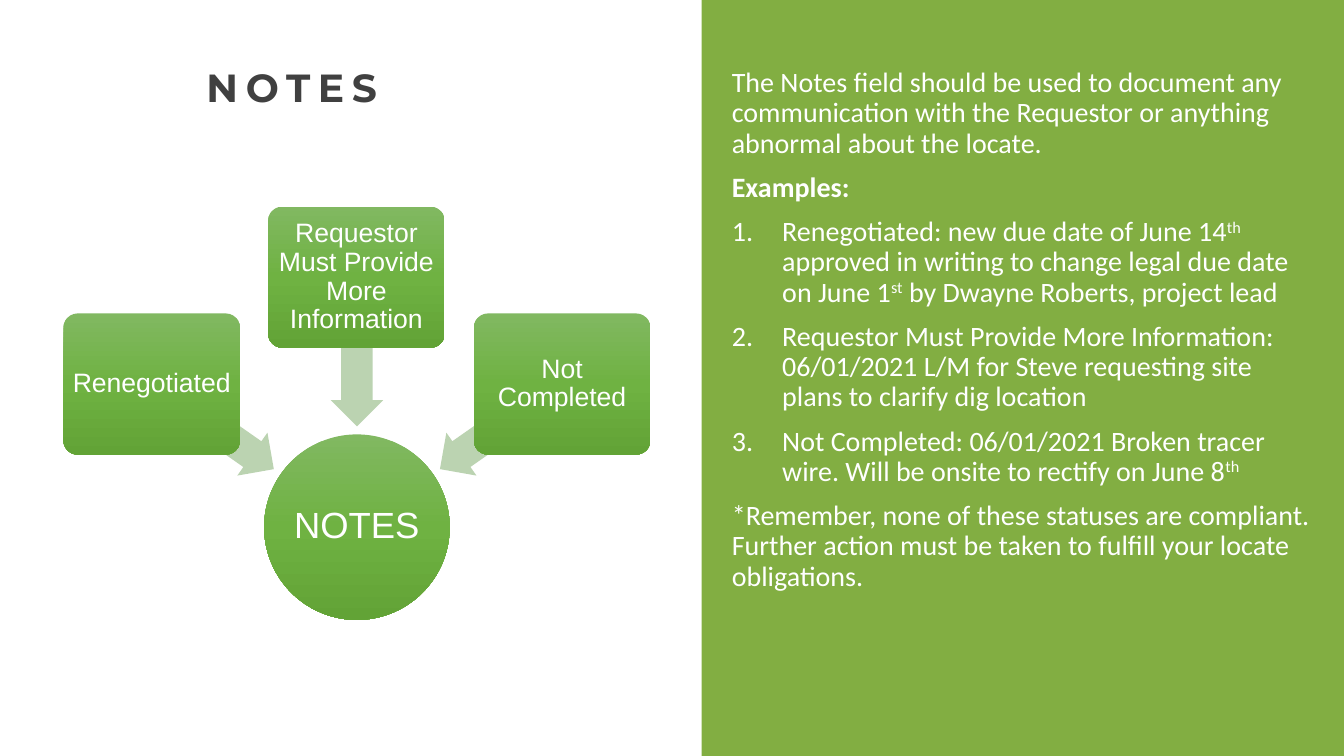
from pptx import Presentation
from pptx.dml.color import RGBColor
from pptx.enum.shapes import MSO_SHAPE
from pptx.enum.text import MSO_ANCHOR, PP_ALIGN
from pptx.oxml.ns import qn
from pptx.oxml.xmlchemy import OxmlElement
from pptx.util import Inches, Pt

WHITE = "FFFFFF"
GREEN_STOPS = ("81B861", "6FB242", "62A336")
STATUSES = [
    ("Renegotiated", 0.63, 3.11, 2.11, 4.23, 215),
    ("Requestor Must Provide More Information", 2.66, 2.05, 3.54, 3.49, 270),
    ("Not Completed", 4.7, 3.11, 4.97, 4.23, 325),
]
INTRO = [
    [("The Notes field should be used to document any communication with the "
      "Requestor or anything abnormal about the locate.", "")],
    [("Examples:", "bold")],
]
EXAMPLES = [
    [("Renegotiated: new due date of June 14", ""), ("th", "super"),
     (" approved in writing to change legal due date on June 1", ""), ("st", "super"),
     (" by Dwayne Roberts, project lead", "")],
    [("Requestor Must Provide More Information: 06/01/2021 L/M for Steve "
      "requesting site plans to clarify dig location", "")],
    [("Not Completed: 06/01/2021 Broken tracer wire. Will be onsite to rectify "
      "on June 8", ""), ("th", "super")],
]
REMINDER = [
    [("*Remember, none of these statuses are compliant. Further action must be "
      "taken to fulfill your locate obligations.", "")],
]


def color(hex_code):
    return RGBColor.from_string(hex_code)


def add_run(paragraph, text, size, font_name, hex_code, bold=False):
    run = paragraph.add_run()
    run.text = text
    run.font.size = Pt(size)
    run.font.name = font_name
    run.font.bold = bold
    run.font.color.rgb = color(hex_code)
    return run


def add_block(slide, preset, left, top, width, height, fill=None):
    block = slide.shapes.add_shape(
        preset, Inches(left), Inches(top), Inches(width), Inches(height))
    block.shadow.inherit = False
    block.line.fill.background()
    if fill:
        block.fill.solid()
        block.fill.fore_color.rgb = color(fill)
    return block


def fill_green_gradient(block):
    block.fill.gradient()
    block.fill.gradient_angle = 270
    first, last = block.fill.gradient_stops
    for stop, hex_code, position in ((first, GREEN_STOPS[0], 0), (last, GREEN_STOPS[2], 1)):
        stop.color.rgb = color(hex_code)
        stop.position = position
    middle = OxmlElement("a:gs")
    middle.set("pos", "50000")
    shade = OxmlElement("a:srgbClr")
    shade.set("val", GREEN_STOPS[1])
    middle.append(shade)
    stops = block.fill._xPr.find(qn("a:gradFill")).find(qn("a:gsLst"))
    stops.insert(1, middle)


def add_node(slide, preset, left, top, width, height, label, size, inset):
    node = add_block(slide, preset, left, top, width, height)
    fill_green_gradient(node)
    frame = node.text_frame
    frame.word_wrap = True
    frame.vertical_anchor = MSO_ANCHOR.MIDDLE
    frame.margin_left = frame.margin_right = Inches(inset)
    frame.margin_top = frame.margin_bottom = Inches(inset)
    paragraph = frame.paragraphs[0]
    paragraph.alignment = PP_ALIGN.CENTER
    paragraph.line_spacing = 0.9
    add_run(paragraph, label, size, "Arial", WHITE)
    return node


def add_arrow(slide, center_x, center_y, rotation):
    width, height = 1.48, 0.52
    arrow = add_block(slide, MSO_SHAPE.LEFT_ARROW, center_x - width / 2,
                      center_y - height / 2, width, height, "BBD3B1")
    arrow.adjustments[0] = 0.6
    arrow.adjustments[1] = 0.5
    arrow.rotation = rotation


def add_text_frame(slide, left, top, width, height):
    box = slide.shapes.add_textbox(
        Inches(left), Inches(top), Inches(width), Inches(height))
    box.text_frame.word_wrap = True
    return box.text_frame


def number_paragraph(paragraph):
    properties = paragraph._p.get_or_add_pPr()
    properties.set("marL", str(Inches(0.5)))
    properties.set("indent", str(Inches(-0.5)))
    numbering = OxmlElement("a:buAutoNum")
    numbering.set("type", "arabicPeriod")
    properties.append(numbering)


def add_guidance(slide):
    frame = add_text_frame(slide, 7.16, 0.63, 5.95, 5.79)
    for index, pieces in enumerate(INTRO + EXAMPLES + REMINDER):
        paragraph = frame.add_paragraph() if index else frame.paragraphs[0]
        if pieces in EXAMPLES:
            number_paragraph(paragraph)
        paragraph.line_spacing = 0.9
        if index:
            paragraph.space_before = Pt(10)
        for text, style in pieces:
            run = add_run(paragraph, text, 20, "Calibri", WHITE, style == "bold")
            if style == "super":
                run.font._element.set("baseline", "30000")


def add_title(slide):
    paragraph = add_text_frame(slide, 1.95, 0.63, 4.8, 1.12).paragraphs[0]
    paragraph.line_spacing = 0.9
    run = add_run(paragraph, "NOTES", 28, "Montserrat", "404040", True)
    run.font._element.set("spc", "550")


def main():
    presentation = Presentation()
    presentation.slide_width = Inches(13.33)
    presentation.slide_height = Inches(7.5)
    slide = presentation.slides.add_slide(presentation.slide_layouts[6])

    add_block(slide, MSO_SHAPE.RECTANGLE, 6.96, 0, 6.37, 7.5, "82AE42")
    add_guidance(slide)
    add_node(slide, MSO_SHAPE.OVAL, 2.62, 4.31, 1.84, 1.84, "NOTES", 26, 0.02)
    for label, left, top, arrow_x, arrow_y, rotation in STATUSES:
        add_arrow(slide, arrow_x, arrow_y, rotation)
        status = add_node(slide, MSO_SHAPE.ROUNDED_RECTANGLE, left, top,
                          1.75, 1.4, label, 19, 0.04)
        status.adjustments[0] = 0.1
    add_title(slide)
    presentation.save("out.pptx")


if __name__ == "__main__":
    main()
